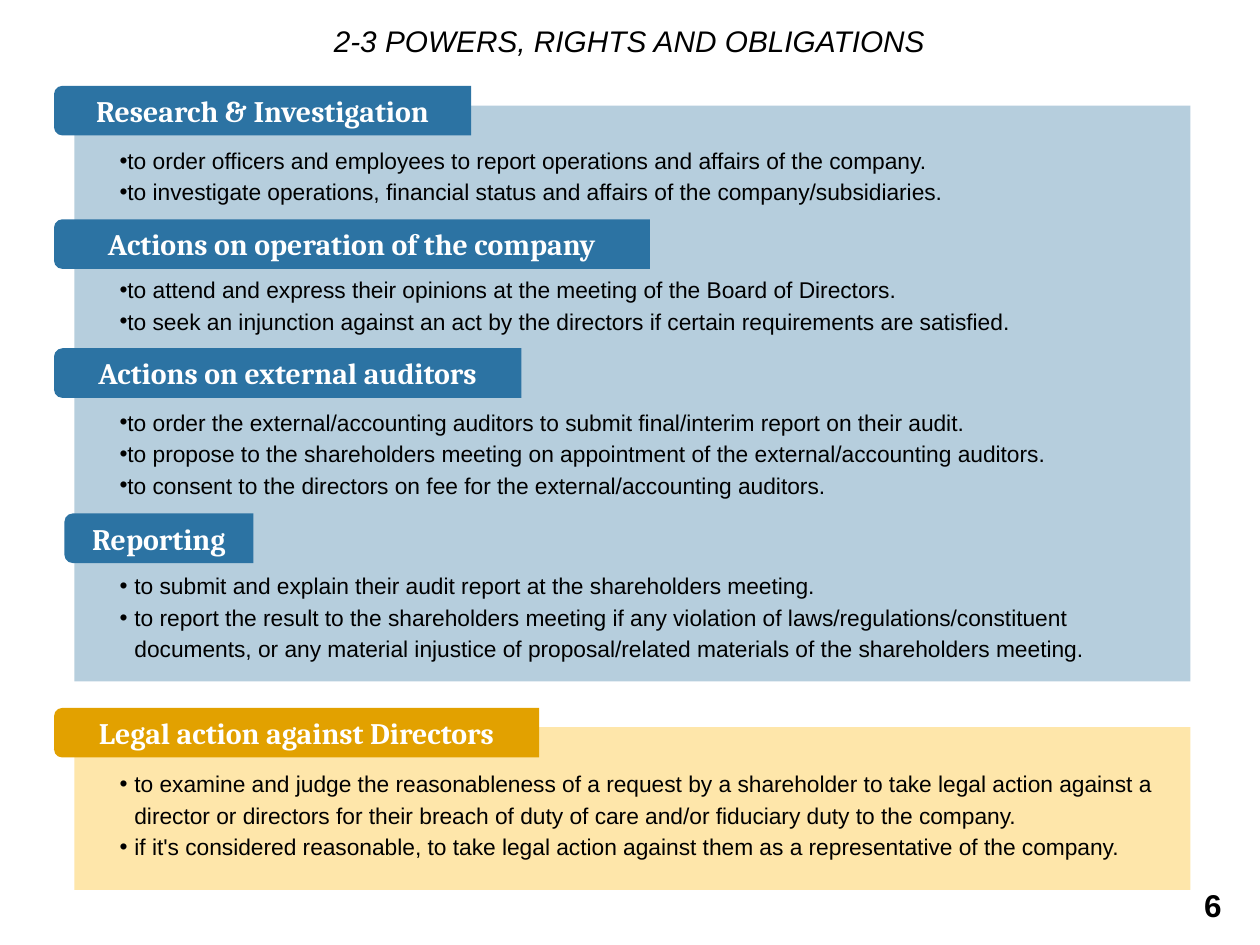
"""Build a slide on the powers, rights and obligations of company auditors."""
from lxml.etree import SubElement
from pptx import Presentation
from pptx.dml.color import RGBColor
from pptx.enum.shapes import MSO_SHAPE as Preset
from pptx.enum.text import MSO_ANCHOR as Anchor, MSO_AUTO_SIZE as AutoSize, PP_ALIGN as Align
from pptx.oxml.ns import qn
from pptx.util import Cm, Pt

COLORS = {
    "text": "000000",
    "label": "FFFFFF",
    "powers": "2C73A3",
    "powers panel": "B6CEDD",
    "legal": "E2A100",
    "legal panel": "FEE6AA",
}


def write(frame, text, size=17, font="Arial", color="text", bold=False, italic=False,
          align=Align.CENTER, anchor=Anchor.MIDDLE, inset=0.1, spacing=None, hang=None):
    frame.word_wrap = True
    frame.auto_size = AutoSize.NONE
    frame.vertical_anchor = anchor
    frame.margin_left = frame.margin_right = Cm(inset)
    frame.margin_top = frame.margin_bottom = Cm(inset)
    frame.text = text
    for paragraph in frame.paragraphs:
        paragraph.alignment = align
        paragraph.space_before = Pt(0)
        paragraph.line_spacing = spacing
        paragraph.font.size = Pt(size)
        paragraph.font.name = font
        paragraph.font.bold = bold
        paragraph.font.italic = italic
        paragraph.font.color.rgb = RGBColor.from_string(COLORS[color])
        if hang is not None:
            properties = paragraph._p.get_or_add_pPr()
            properties.set("marL", str(Cm(hang)))
            properties.set("indent", str(-Cm(0.3)))
            SubElement(properties, qn("a:buFont"), typeface="Arial")
            SubElement(properties, qn("a:buChar"), char="•")


def add_block(preset, left, top, width, height, color):
    block = slide.shapes.add_shape(preset, Cm(left), Cm(top), Cm(width), Cm(height))
    block.shadow.inherit = False
    block.fill.solid()
    block.fill.fore_color.rgb = RGBColor.from_string(COLORS[color])
    block.line.fill.background()
    return block


deck = Presentation()
deck.slide_width, deck.slide_height = Cm(25.4), Cm(19.05)
slide = deck.slides.add_slide(deck.slide_layouts.get_by_name("Comparison"))
heading, *lists = slide.placeholders

heading.left, heading.top, heading.width, heading.height = Cm(5.69), Cm(0.33), Cm(14), Cm(0.99)
write(heading.text_frame, "2-3 POWERS, RIGHTS AND OBLIGATIONS", italic=True)

for panel_top, panel_height, panel_color in [(14.66, 3.28, "legal panel"), (2.13, 11.61, "powers panel")]:
    panel = add_block(Preset.RECTANGLE, 1.5, panel_top, 22.5, panel_height, panel_color)
    heading.element.getparent().insert(2, panel.element)

lists.append(slide.shapes.add_textbox(0, 0, 0, 0))

sections = [
    ("Research & Investigation", "powers", (1.09, 1.73, 8.41), (2.77, 17.17, 1.42), 0, [
        "to order officers and employees to report operations and affairs of the company.",
        "to investigate operations, financial status and affairs of the company/subsidiaries.",
    ]),
    ("Actions on operation of the company", "powers", (1.09, 4.42, 12.01), (5.38, 18.54, 1.42), 0, [
        "to attend and express their opinions at the meeting of the Board of Directors.",
        "to seek an injunction against an act by the directors if certain requirements are satisfied.",
    ]),
    ("Actions on external auditors", "powers", (1.09, 7.02, 9.42), (8.05, 19.28, 2.08), 0, [
        "to order the external/accounting auditors to submit final/interim report on their audit.",
        "to propose to the shareholders meeting on appointment of the external/accounting auditors.",
        "to consent to the directors on fee for the external/accounting auditors.",
    ]),
    ("Reporting", "powers", (1.3, 10.35, 3.81), (11.35, 21, 2.08), 0.3, [
        "to submit and explain their audit report at the shareholders meeting.",
        "to report the result to the shareholders meeting if any violation of laws/regulations/constituent "
        "documents, or any material injustice of proposal/related materials of the shareholders meeting.",
    ]),
    ("Legal action against Directors", "legal", (1.09, 14.27, 9.78), (15.34, 21, 2.08), 0.3, [
        "to examine and judge the reasonableness of a request by a shareholder to take legal action against a "
        "director or directors for their breach of duty of care and/or fiduciary duty to the company.",
        "if it's considered reasonable, to take legal action against them as a representative of the company.",
    ]),
]

tab_height = 1
for (name, color, (left, top, width), (list_top, list_width, list_height), hang, duties), duty_list in zip(sections, lists):
    shift = (width - tab_height) / 2
    tab = add_block(Preset.ROUND_2_SAME_RECTANGLE, left + shift, top - shift, tab_height, width, color)
    tab.rotation = 270
    label = slide.shapes.add_textbox(Cm(left), Cm(top), Cm(width), Cm(tab_height))
    write(label.text_frame, name, font="Cambria", color="label", bold=True)
    duty_list.left, duty_list.top = Cm(2.31), Cm(list_top)
    duty_list.width, duty_list.height = Cm(list_width), Cm(list_height)
    write(duty_list.text_frame, "\n".join(duties), size=13, align=Align.LEFT,
          anchor=Anchor.TOP, spacing=Pt(18), hang=hang)

page_number = slide.shapes.add_textbox(Cm(23.5), Cm(17.73), Cm(1.9), Cm(1.02))
write(page_number.text_frame, "6", size=18, bold=True)

deck.save("out.pptx")
